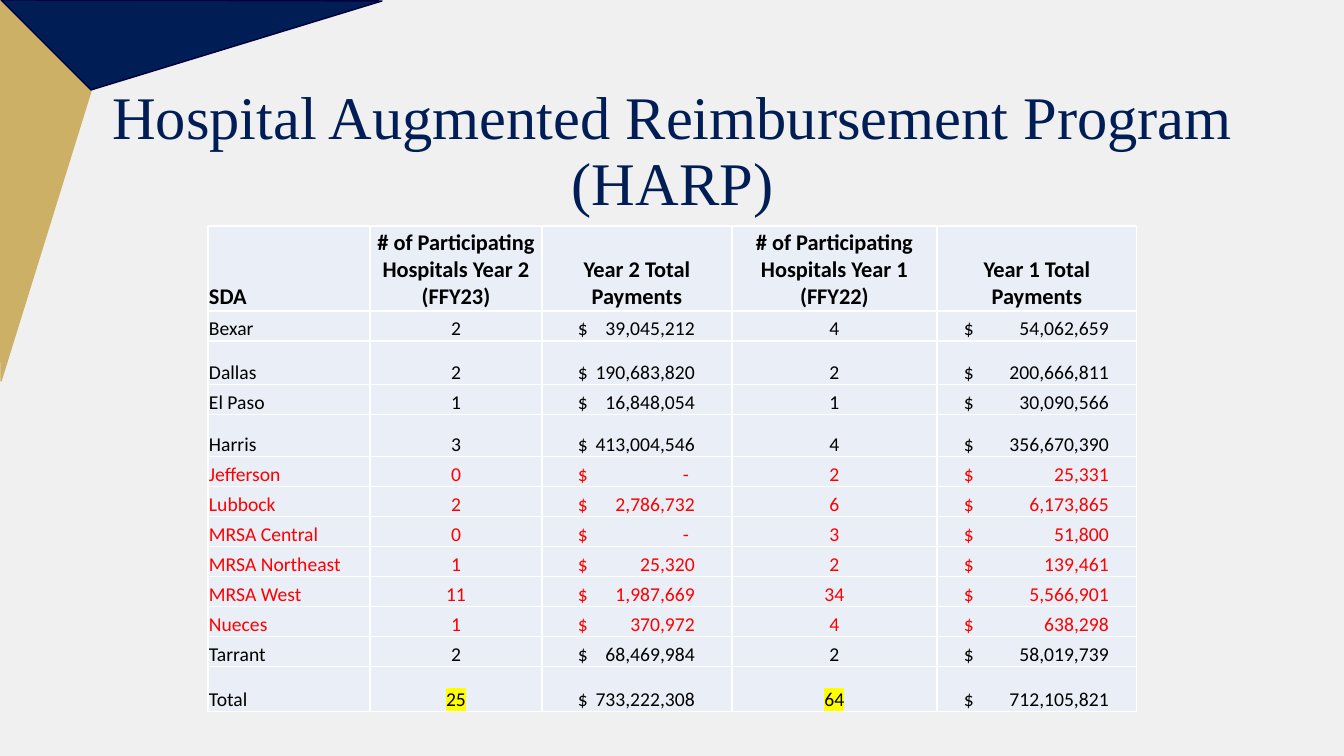
"""Build the Hospital Augmented Reimbursement Program slide with its payments table."""
from dataclasses import dataclass
from typing import NamedTuple

from pptx import Presentation
from pptx.dml.color import RGBColor as RGB
from pptx.enum.text import MSO_ANCHOR as Anchor, PP_ALIGN as Align
from pptx.oxml import parse_xml
from pptx.oxml.ns import nsdecls
from pptx.util import Emu, Pt

EMU_PER_PX = 12192000 / 1344


@dataclass(frozen=True)
class Theme:
    background: str = "F0F0F0"
    navy: str = "001E55"
    navy_edge: str = "00003E"
    gold: str = "CCB066"
    cell: str = "EAEFF7"
    border: str = "FFFFFF"
    text: str = "000000"
    alert: str = "FF0000"
    highlight: str = "FFFF00"
    title_font: str = "Times New Roman"
    table_font: str = "Calibri"
    title_size: float = 43.2
    header_size: float = 16
    body_size: float = 14


class Corner(NamedTuple):
    points: tuple[tuple[int, int], ...]
    fill: str
    edge: str


class Area(NamedTuple):
    name: str
    hospitals_y2: int
    paid_y2: int
    hospitals_y1: int
    paid_y1: int
    height: int = 30
    alert: bool = False
    total: bool = False


class MoneySpan(NamedTuple):
    left: int
    width: int


T = Theme()
CORNERS = (
    Corner(((91, 91), (0, 1), (1, 381)), T.gold, T.gold),
    Corner(((382, 1), (1, 0), (91, 90)), T.navy, T.navy_edge),
)
HEADERS = (
    "SDA",
    "# of Participating Hospitals Year 2 (FFY23)",
    "Year 2 Total Payments",
    "# of Participating Hospitals Year 1 (FFY22)",
    "Year 1 Total Payments",
)
HEADER_HEIGHT = 85
COLUMN_WIDTHS = (162, 172, 190, 205, 200)
MONEY_SPANS = {2: MoneySpan(36, 117), 4: MoneySpan(27, 145)}
DASH_INSET = 6
AREAS = (
    Area("Bexar", 2, 39045212, 4, 54062659),
    Area("Dallas", 2, 190683820, 2, 200666811, height=44),
    Area("El Paso", 1, 16848054, 1, 30090566),
    Area("Harris", 3, 413004546, 4, 356670390, height=42),
    Area("Jefferson", 0, 0, 2, 25331, alert=True),
    Area("Lubbock", 2, 2786732, 6, 6173865, alert=True),
    Area("MRSA Central", 0, 0, 3, 51800, alert=True),
    Area("MRSA Northeast", 1, 25320, 2, 139461, alert=True),
    Area("MRSA West", 11, 1987669, 34, 5566901, alert=True),
    Area("Nueces", 1, 370972, 4, 638298, alert=True),
    Area("Tarrant", 2, 68469984, 2, 58019739),
    Area("Total", 25, 733222308, 64, 712105821, height=45, total=True),
)


def px(n: int) -> Emu:
    """Convert whole pixels to EMU."""
    return Emu(round(n * EMU_PER_PX))


def style(p, font: str, size: float, color: str, bold: bool = False) -> None:
    """Set the font of a whole paragraph."""
    p.font.name, p.font.size, p.font.bold = font, Pt(size), bold
    p.font.color.rgb = RGB.from_string(color)


def draw_corner(s, corner: Corner) -> None:
    """Draw one corner triangle."""
    start, *rest = corner.points
    builder = s.shapes.build_freeform(*start, scale=EMU_PER_PX)
    builder.add_line_segments(rest, close=True)
    sp = builder.convert_to_shape()
    sp.shadow.inherit = False
    sp.fill.solid()
    sp.fill.fore_color.rgb = RGB.from_string(corner.fill)
    sp.line.color.rgb = RGB.from_string(corner.edge)
    sp.line.width = Pt(1)


def draw_title(s, text: str) -> None:
    """Draw the centred slide title."""
    tf = s.shapes.add_textbox(px(93), px(80), px(1159), px(146)).text_frame
    tf.word_wrap = True
    tf.vertical_anchor = Anchor.MIDDLE
    p = tf.paragraphs[0]
    p.add_run().text = text
    p.alignment, p.line_spacing = Align.CENTER, 0.9
    style(p, T.title_font, T.title_size, T.navy)


def prepare_cell(cell) -> None:
    """Give a cell its borders, fill and insets."""
    tc_pr = cell._tc.get_or_add_tcPr()
    for side in "LRTB":
        tc_pr.append(parse_xml(
            f'<a:ln{side} {nsdecls("a")} w="12700"><a:solidFill>'
            f'<a:srgbClr val="{T.border}"/></a:solidFill></a:ln{side}>'))
    cell.fill.solid()
    cell.fill.fore_color.rgb = RGB.from_string(T.cell)
    cell.vertical_anchor = Anchor.BOTTOM
    cell.margin_left = cell.margin_right = cell.margin_top = px(1)
    cell.margin_bottom = 0


def fill_header(cell, col: int, text: str) -> None:
    """Write a column heading."""
    prepare_cell(cell)
    p = cell.text_frame.paragraphs[0]
    p.add_run().text = text
    p.alignment = Align.CENTER if col else Align.LEFT
    style(p, T.table_font, T.header_size, T.text, bold=True)


def fill_value(cell, col: int, area: Area) -> None:
    """Write one value of a service area."""
    prepare_cell(cell)
    value = area[col]
    p = cell.text_frame.paragraphs[0]
    r = p.add_run()
    if col in MONEY_SPANS:
        span = MONEY_SPANS[col]
        stop = px(span.width if value else span.width - DASH_INSET)
        cell.margin_left = px(span.left)
        r.text = f"$\t{value:,}" if value else "$\t-"
        p.alignment = Align.LEFT
        p._p.get_or_add_pPr().append(parse_xml(
            f'<a:tabLst {nsdecls("a")}><a:tab pos="{stop}" algn="r"/></a:tabLst>'))
    else:
        r.text = str(value)
        p.alignment = Align.CENTER if col else Align.LEFT
        if area.total and col:
            r._r.get_or_add_rPr().append(parse_xml(
                f'<a:highlight {nsdecls("a")}><a:srgbClr val="{T.highlight}"/></a:highlight>'))
    style(p, T.table_font, T.body_size, T.alert if area.alert else T.text)


def draw_table(s) -> None:
    """Draw the payments table."""
    heights = (HEADER_HEIGHT, *(area.height for area in AREAS))
    table = s.shapes.add_table(len(heights), len(HEADERS), px(208), px(226),
                               px(sum(COLUMN_WIDTHS)), px(sum(heights))).table
    table.first_row = table.horz_banding = False
    for row, height in zip(table.rows, heights):
        row.height = px(height)
    for col, (width, header) in enumerate(zip(COLUMN_WIDTHS, HEADERS)):
        table.columns[col].width = px(width)
        fill_header(table.cell(0, col), col, header)
        for row, area in enumerate(AREAS, start=1):
            fill_value(table.cell(row, col), col, area)


def main() -> None:
    """Build and save the slide."""
    prs = Presentation()
    prs.slide_width, prs.slide_height = px(1344), px(756)
    s = prs.slides.add_slide(prs.slide_layouts[6])
    s.background.fill.solid()
    s.background.fill.fore_color.rgb = RGB.from_string(T.background)
    for corner in CORNERS:
        draw_corner(s, corner)
    draw_title(s, "Hospital Augmented Reimbursement Program (HARP)")
    draw_table(s)
    prs.save("out.pptx")


if __name__ == "__main__":
    main()
